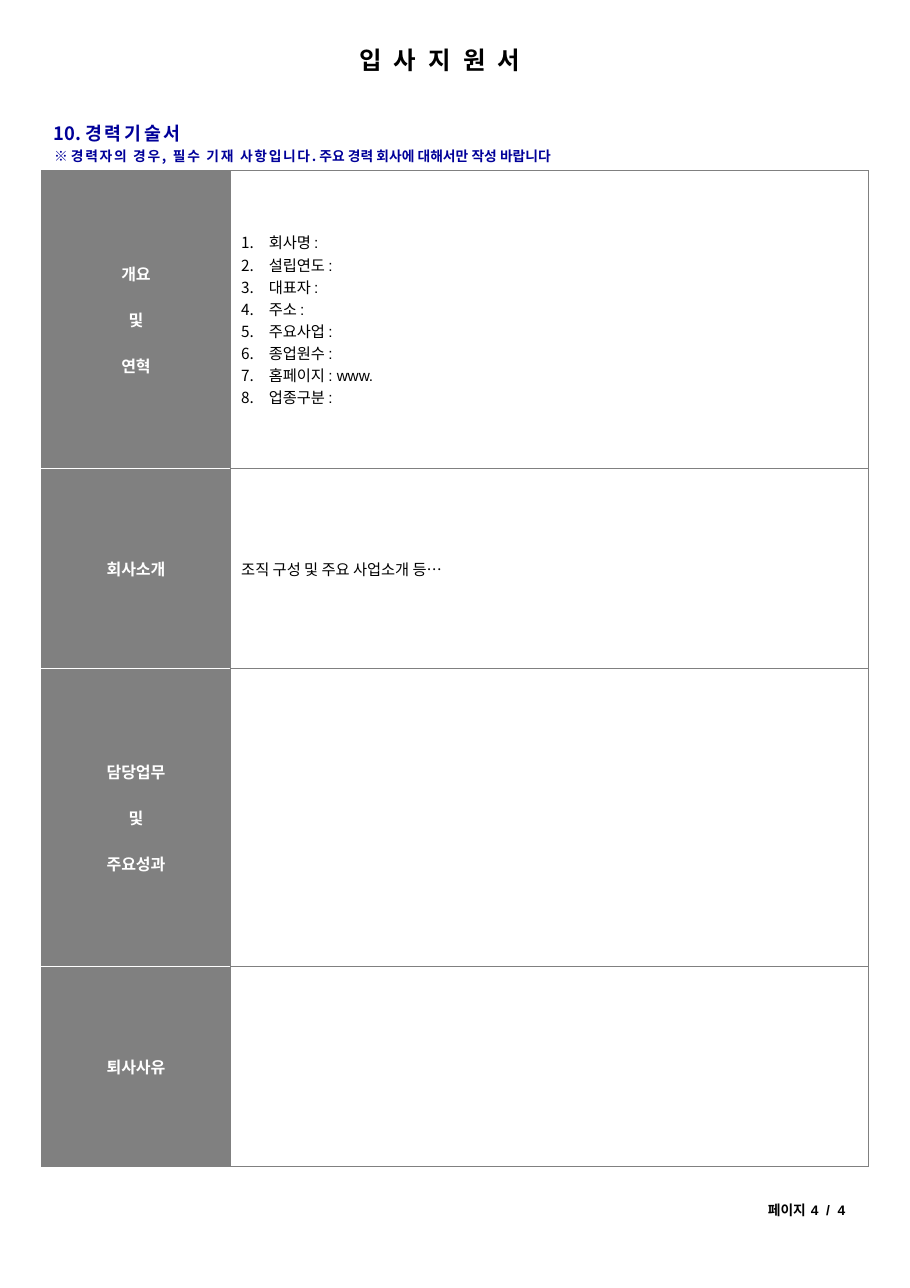
from lxml.etree import SubElement as Sub
from pptx import Presentation
from pptx.dml.color import RGBColor as RGB
from pptx.enum.text import MSO_ANCHOR as Anchor, MSO_AUTO_SIZE as Auto, PP_ALIGN as Align
from pptx.oxml.ns import qn
from pptx.util import Inches, Pt

INK = {"black": "000000", "navy": "000099", "gray": "808080", "white": "FFFFFF"}
LATIN, KOREAN = "Arial", "Noto Sans CJK KR"

TITLE = [("입 사 지 원 서", 2.2)]
LINES = [
    ((0.49, 1.11, 4.44, 0.2), 12, "navy", KOREAN,
     [("10. ", -0.1), ("경력기술서", 1.8)]),
    ((0.49, 1.34, 6.12, 0.15), 9, "navy", KOREAN,
     [("※ ", 0), ("경력자의 경우, 필수 기재 사항입니다", 1.1),
      (". 주요 경력 회사에 대해서만 작성 바랍니다", 0)]),
    ((6.97, 10.91, 0.9, 0.15), 9, "black", LATIN,
     [("페이지", 0), (" 4 / ", 1.25), ("4", -0.5)]),
]
FACTS = ["회사명 :", "설립연도 :", "대표자 :", "주소 :", "주요사업 :",
         "종업원수 :", "홈페이지 : www.", "업종구분 :"]
ROWS = [
    (2.7, ["개요", "및", "연혁"], FACTS),
    (1.82, ["회사소개"], ["조직 구성 및 주요 사업소개 등…"]),
    (2.7, ["담당업무", "및", "주요성과"], []),
    (1.82, ["퇴사사유"], []),
]
COLS = [1.71, 5.79]


def style(para, size, color, bold, face=LATIN):
    font = para.font
    font.size, font.bold, font.name = Pt(size), bold, face
    font.color.rgb = RGB.from_string(INK[color])
    for run in para.runs:
        Sub(run.font._element, qn("a:ea"), typeface=KOREAN)


def write(frame, parts, size, color, face):
    para = frame.paragraphs[0]
    for text, gap in parts:
        run = para.add_run()
        run.text = text
        if gap:
            run.font._element.set("spc", str(round(gap * 100)))
    style(para, size, color, True, face)


def number(para):
    props = para._p.get_or_add_pPr()
    props.set("marL", str(Inches(0.25)))
    props.set("indent", str(-Inches(0.25)))
    Sub(props, qn("a:buFont"), typeface=KOREAN)
    Sub(props, qn("a:buAutoNum"), type="arabicPeriod")


def border(cell, sides):
    props = cell._tc.get_or_add_tcPr()
    for side, color in zip("LRTB", sides):
        line = Sub(props, qn("a:ln" + side), w=str(Pt(0.75)))
        fill = Sub(line, qn("a:solidFill"))
        Sub(fill, qn("a:srgbClr"), val=INK[color])


def fill_cell(cell, items, label):
    cell.vertical_anchor = Anchor.MIDDLE
    frame = cell.text_frame
    for i, text in enumerate(items):
        para = frame.add_paragraph() if i else frame.paragraphs[0]
        para.add_run().text = text
        if label:
            para.alignment = Align.CENTER
            para.space_before = Pt(15.2 if i else 0)
            style(para, 10.5, "white", True)
        else:
            if len(items) > 1:
                number(para)
            style(para, 10, "black", False)


def main():
    deck = Presentation()
    deck.slide_width, deck.slide_height = Inches(8.26), Inches(11.69)
    slide = deck.slides.add_slide(deck.slide_layouts[5])

    title = slide.shapes.title
    title.left, title.top, title.width, title.height = map(Inches, (3.16, 0.36, 1.96, 0.37))
    frame = title.text_frame
    frame.auto_size, frame.word_wrap = Auto.NONE, False
    frame.vertical_anchor = Anchor.MIDDLE
    write(frame, TITLE, 16, "black", LATIN)
    frame.paragraphs[0].alignment = Align.LEFT

    for place, size, color, face, parts in LINES:
        frame = slide.shapes.add_textbox(*map(Inches, place)).text_frame
        frame.margin_left = frame.margin_right = frame.margin_top = frame.margin_bottom = 0
        frame.word_wrap, frame.vertical_anchor = True, Anchor.MIDDLE
        write(frame, parts, size, color, face)

    high = sum(row[0] for row in ROWS)
    table = slide.shapes.add_table(
        len(ROWS), len(COLS), Inches(0.38), Inches(1.55),
        Inches(sum(COLS)), Inches(high)).table
    table.first_row = table.horz_banding = False
    for col, wide in zip(table.columns, COLS):
        col.width = Inches(wide)
    last = len(ROWS) - 1
    for i, (tall, names, facts) in enumerate(ROWS):
        table.rows[i].height = Inches(tall)
        head, body = table.cell(i, 0), table.cell(i, 1)
        border(head, ("gray", "gray", "white" if i else "gray",
                      "white" if i < last else "gray"))
        border(body, ["gray"] * 4)
        head.fill.solid()
        head.fill.fore_color.rgb = RGB.from_string(INK["gray"])
        body.fill.background()
        fill_cell(head, names, True)
        fill_cell(body, facts, False)

    deck.save("out.pptx")


if __name__ == "__main__":
    main()
